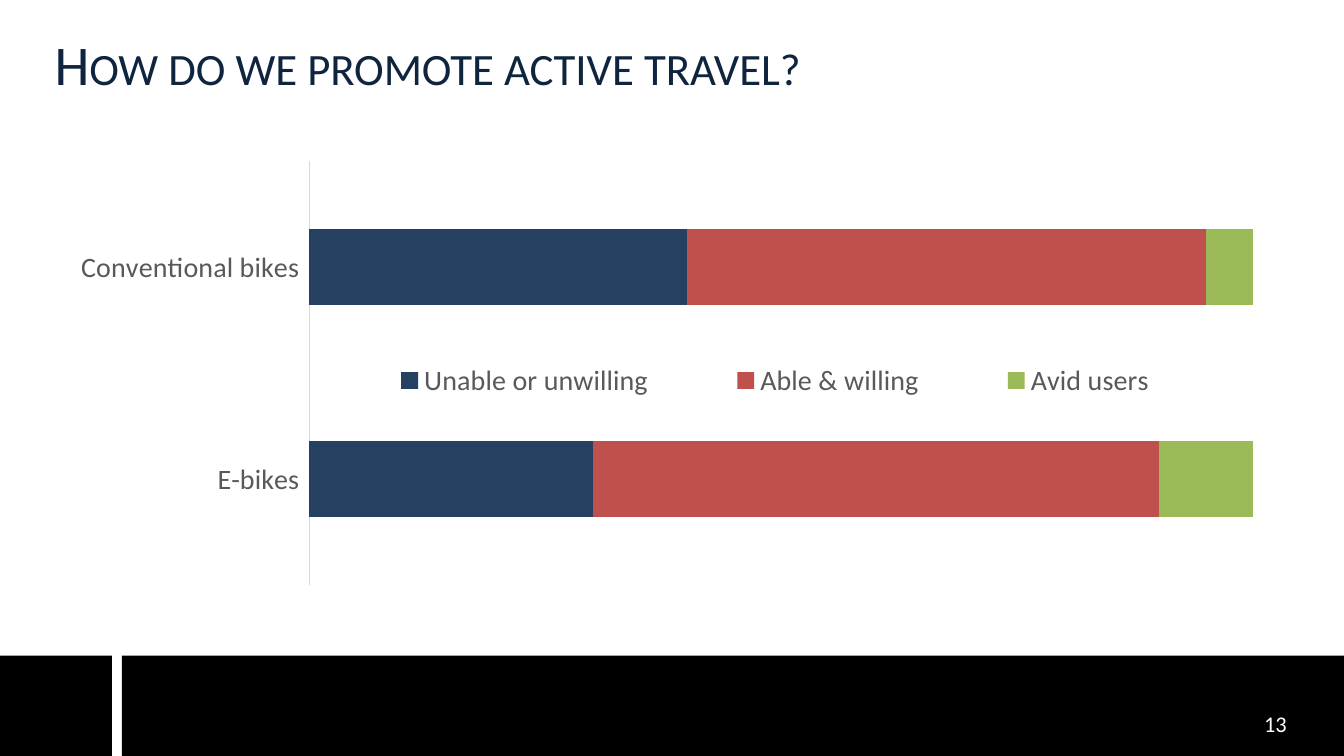
from lxml import etree
from pptx import Presentation
from pptx.chart.data import CategoryChartData
from pptx.dml.color import RGBColor
from pptx.enum.chart import XL_CHART_TYPE as ChartType
from pptx.enum.chart import XL_LEGEND_POSITION as LegendPosition
from pptx.enum.chart import XL_TICK_LABEL_POSITION as LabelPosition
from pptx.enum.chart import XL_TICK_MARK as TickMark
from pptx.enum.shapes import MSO_SHAPE as Preset
from pptx.enum.text import MSO_ANCHOR as Anchor
from pptx.enum.text import MSO_AUTO_SIZE as AutoSize
from pptx.enum.text import PP_ALIGN as Align
from pptx.oxml.ns import qn
from pptx.util import Cm, Pt

FONT = "Calibri"
COLORS = {
    "title": "0F243E",
    "band": "000000",
    "number": "FFFFFF",
    "label": "595959",
    "axis": "D9D9D9",
}
BIKES = ["E-bikes", "Conventional bikes"]
ATTITUDES = [
    ("Unable or unwilling", [30, 40], "254061"),
    ("Able & willing", [60, 55], "C0504D"),
    ("Avid users", [10, 5], "9BBB59"),
]
SLIDE_WIDTH, SLIDE_HEIGHT = Cm(33.86), Cm(19.05)


def style_font(font, size, color):
    font.name = FONT
    font.size = Pt(size)
    font.color.rgb = RGBColor.from_string(COLORS[color])


def add_band(slide, left, right):
    """Draw one part of the footer band, down to the slide's bottom edge."""
    top = Cm(16.52)
    band = slide.shapes.add_shape(Preset.RECTANGLE, left, top, right - left, SLIDE_HEIGHT - top)
    band.shadow.inherit = False
    band.fill.solid()
    band.fill.fore_color.rgb = RGBColor.from_string(COLORS["band"])
    band.line.fill.background()


def set_title(slide, wording):
    title = slide.shapes.title
    title.left, title.top, title.width, title.height = Cm(1.12), Cm(0.43), Cm(31.6), Cm(2.34)
    frame = title.text_frame
    frame.vertical_anchor = Anchor.MIDDLE
    frame.auto_size = AutoSize.NONE
    frame.paragraphs[0].alignment = Align.LEFT
    run = frame.paragraphs[0].add_run()
    run.text = wording
    style_font(run.font, 40, "title")
    run._r.get_or_add_rPr().set("cap", "small")


def add_slide_number(slide, number):
    box = slide.shapes.add_textbox(Cm(31.6), Cm(17.78), Cm(2.26), Cm(1.27))
    box.text_frame.word_wrap = True
    run = box.text_frame.paragraphs[0].add_run()
    run.text = number
    style_font(run.font, 16, "number")


def place_by_fraction(element, left, top, width, height, inner=False):
    """Fix a chart part's place, in fractions of the chart's size."""
    layout = element.find(qn("c:layout"))
    if layout is None:
        layout = etree.Element(qn("c:layout"))
        if inner:
            element.insert(0, layout)
        else:
            element.find(qn("c:legendPos")).addnext(layout)
    manual = etree.SubElement(layout, qn("c:manualLayout"))
    settings = [("layoutTarget", "inner")] if inner else []
    settings += [("xMode", "edge"), ("yMode", "edge")]
    settings += [("x", left), ("y", top), ("w", width), ("h", height)]
    for tag, value in settings:
        etree.SubElement(manual, qn(f"c:{tag}")).set("val", str(value))


def add_attitude_chart(slide):
    data = CategoryChartData()
    data.categories = BIKES
    for name, shares, _ in ATTITUDES:
        data.add_series(name, shares)
    chart = slide.shapes.add_chart(
        ChartType.BAR_STACKED_100, Cm(1.7), Cm(3.81), Cm(30.48), Cm(12.57), data
    ).chart
    chart.has_title = False
    style_font(chart.font, 20, "label")

    plot = chart.plots[0]
    plot.vary_by_categories = False
    plot.gap_width = 182
    plot.overlap = 100
    for series, (_, _, color) in zip(plot.series, ATTITUDES):
        series.format.fill.solid()
        series.format.fill.fore_color.rgb = RGBColor.from_string(color)

    bikes_axis = chart.category_axis
    bikes_axis.major_tick_mark = TickMark.NONE
    bikes_axis.tick_label_position = LabelPosition.LOW
    bikes_axis.format.line.width = Pt(0.75)
    bikes_axis.format.line.color.rgb = RGBColor.from_string(COLORS["axis"])
    style_font(bikes_axis.tick_labels.font, 20, "label")
    chart.value_axis.visible = False
    chart.value_axis.has_major_gridlines = False

    chart.has_legend = True
    legend = chart.legend
    legend.position = LegendPosition.BOTTOM
    legend.include_in_layout = False
    style_font(legend.font, 20, "label")

    plot_area = chart.element.find(f".//{qn('c:plotArea')}")
    place_by_fraction(plot_area, 0.2, 0.02, 0.78, 0.85, inner=True)
    place_by_fraction(chart.element.find(f".//{qn('c:legend')}"), 0.21, 0.41, 0.75, 0.1)


def main():
    deck = Presentation()
    deck.slide_width, deck.slide_height = SLIDE_WIDTH, SLIDE_HEIGHT
    slide = deck.slides.add_slide(deck.slide_layouts[5])
    add_band(slide, Cm(0), Cm(2.82))
    add_band(slide, Cm(3.07), SLIDE_WIDTH)
    set_title(slide, "How do we promote active travel?")
    add_attitude_chart(slide)
    add_slide_number(slide, "13")
    deck.save("out.pptx")


if __name__ == "__main__":
    main()
